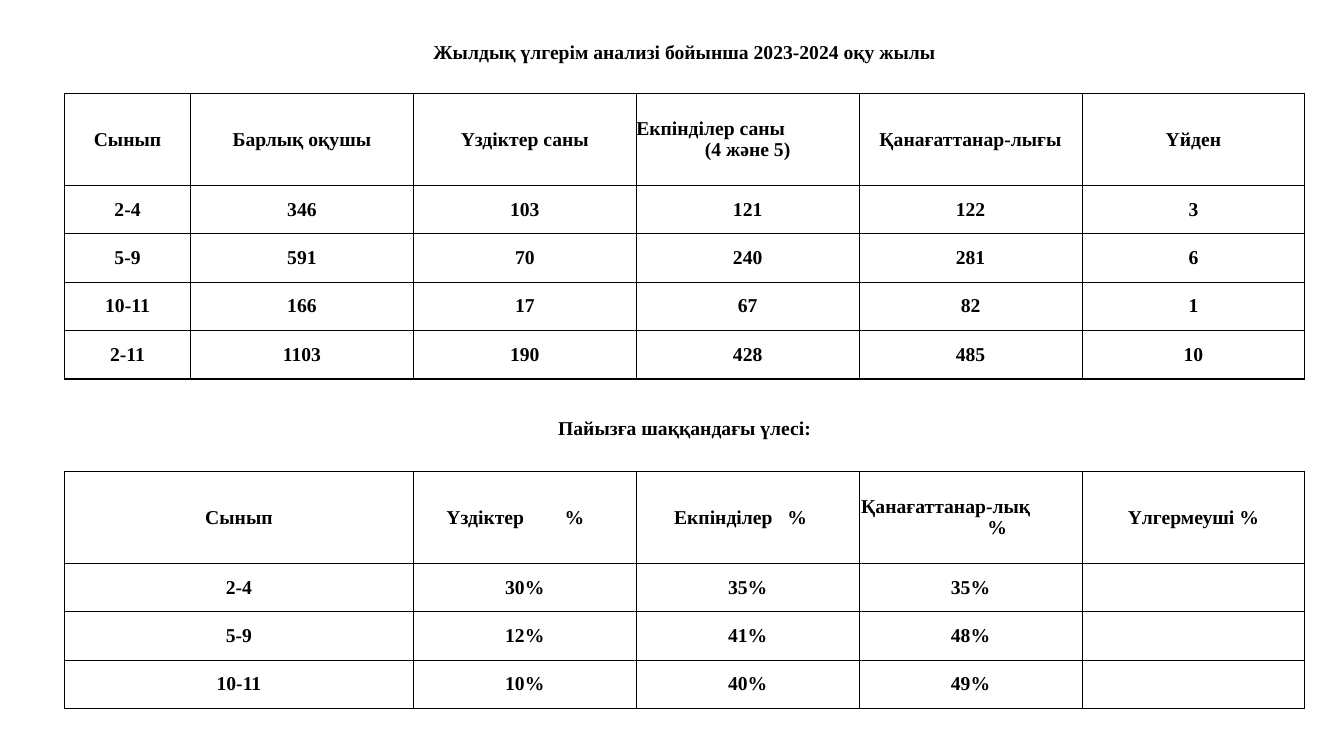
from lxml.etree import SubElement
from pptx import Presentation
from pptx.dml.color import RGBColor
from pptx.enum.text import MSO_ANCHOR as Anchor, PP_ALIGN as Align
from pptx.oxml.ns import qn
from pptx.util import Pt

BLACK = RGBColor(0, 0, 0)
THIN, THICK = 0.5, 1

COLUMN_WIDTHS = [90] + [159.2] * 5
HEADER, ENTRY = 65.5, 34.6
ROW_HEIGHTS = [28, 15.1, HEADER, *[ENTRY] * 4, 21.6, 21.6, 23, HEADER, *[ENTRY] * 3]

HEADINGS = {
    0: ("Жылдық үлгерім анализі бойынша 2023-2024 оқу жылы", Anchor.MIDDLE),
    8: ("Пайызға шаққандағы үлесі:", Anchor.BOTTOM),
}
COUNTS_TOP = 2
COUNTS = [
    ["Сынып", "Барлық оқушы", "Үздіктер саны", None, "Қанағаттанар-лығы", "Үйден"],
    ["2-4", "346", "103", "121", "122", "3"],
    ["5-9", "591", "70", "240", "281", "6"],
    ["10-11", "166", "17", "67", "82", "1"],
    ["2-11", "1103", "190", "428", "485", "10"],
]
SHARES_TOP = 10
SHARES = [
    ["Сынып", None, None, None, None, "Үлгермеуші %"],
    ["2-4", None, "30%", "35%", "35%", None],
    ["5-9", None, "12%", "41%", "48%", None],
    ["10-11", None, "10%", "40%", "49%", None],
]


class ReportSlide:
    def __init__(self, presentation, font="Times New Roman", size=14, color=BLACK):
        self.slide = presentation.slides.add_slide(presentation.slide_layouts[6])
        self.font, self.size, self.color = font, size, color

    def add_grid(self, left, top, widths, heights):
        """Add a table of plain, empty cells without borders."""
        frame = self.slide.shapes.add_table(
            len(heights), len(widths), Pt(left), Pt(top), Pt(sum(widths)), Pt(sum(heights)))
        table = frame.table
        table.first_row = table.horz_banding = False
        for column, width in zip(table.columns, widths):
            column.width = Pt(width)
        for row, height in zip(table.rows, heights):
            row.height = Pt(height)
        for cell in table.iter_cells():
            cell.margin_left = cell.margin_right = cell.margin_top = cell.margin_bottom = 0
            end = SubElement(cell.text_frame.paragraphs[0]._p, qn("a:endParaRPr"))
            end.set("sz", "1000")
            self.set_borders(cell)
            cell.fill.background()
        return table

    def set_borders(self, cell, left=0, right=0, top=0, bottom=0):
        """Set the border widths in points; 0 hides a border."""
        properties = cell._tc.get_or_add_tcPr()
        sides = zip(("a:lnL", "a:lnR", "a:lnT", "a:lnB"), (left, right, top, bottom))
        for position, (tag, width) in enumerate(sides):
            for old in properties.findall(qn(tag)):
                properties.remove(old)
            line = SubElement(properties, qn(tag), w=str(Pt(width)))
            properties.insert(position, line)
            if width:
                fill = SubElement(line, qn("a:solidFill"))
                SubElement(fill, qn("a:srgbClr"), val=str(self.color))
            else:
                SubElement(line, qn("a:noFill"))

    def add_text(self, cell, text, anchor=Anchor.MIDDLE, align=Align.CENTER):
        cell.vertical_anchor = anchor
        return self.add_run(cell.text_frame.paragraphs[0], text, align)

    def add_run(self, paragraph, text, align=Align.CENTER):
        paragraph.alignment = align
        run = paragraph.add_run()
        run.text = text
        run.font.name, run.font.size, run.font.bold = self.font, Pt(self.size), True
        run.font.color.rgb = self.color
        return paragraph

    def set_indent(self, paragraph, margin, indent=0):
        properties = paragraph._p.get_or_add_pPr()
        properties.set("marL", str(Pt(margin)))
        properties.set("indent", str(Pt(indent)))
        return properties

    def add_split_text(self, cell, first, second, first_margin=0, second_margin=0):
        """Add a left-aligned line above a centred one."""
        upper = self.add_text(cell, first, align=Align.LEFT)
        lower = self.add_run(cell.text_frame.add_paragraph(), second)
        self.set_indent(upper, first_margin)
        self.set_indent(lower, second_margin)

    def add_tabbed_text(self, cell, label, unit, indent, stop):
        """Add a label and its unit on one line, both at fixed places."""
        paragraph = self.add_text(cell, f"{label}\t{unit}", align=Align.LEFT)
        properties = self.set_indent(paragraph, 0, indent)
        tabs = SubElement(properties, qn("a:tabLst"))
        SubElement(tabs, qn("a:tab"), pos=str(Pt(stop)), algn="l")

    def fill_block(self, table, first_row, block):
        """Fill a block of rows with thin inner and thick outer borders."""
        last_row, last_column = len(block) - 1, len(block[0]) - 1
        for i, values in enumerate(block):
            for j, value in enumerate(values):
                cell = table.cell(first_row + i, j)
                if value:
                    self.add_text(cell, value)
                self.set_borders(
                    cell,
                    left=THIN if j else THICK,
                    right=THICK if j == last_column else THIN,
                    top=THIN if i else THICK,
                    bottom=THICK if i == last_row else THIN)


def main():
    presentation = Presentation()
    presentation.slide_width, presentation.slide_height = Pt(960), Pt(540)
    report = ReportSlide(presentation)
    table = report.add_grid(46.1, 23.8, COLUMN_WIDTHS, ROW_HEIGHTS)
    last_column = len(COLUMN_WIDTHS) - 1

    for row, (text, anchor) in HEADINGS.items():
        table.cell(row, 0).merge(table.cell(row, last_column))
        report.add_text(table.cell(row, 0), text, anchor)

    for first_row, block in ((COUNTS_TOP, COUNTS), (SHARES_TOP, SHARES)):
        report.fill_block(table, first_row, block)
        for column in range(last_column + 1):
            report.set_borders(table.cell(first_row - 1, column), bottom=THICK)
    for column in range(last_column + 1):
        report.set_borders(table.cell(COUNTS_TOP + len(COUNTS), column), top=THICK)
    for row in range(SHARES_TOP, SHARES_TOP + len(SHARES)):
        table.cell(row, 0).merge(table.cell(row, 1))

    report.add_split_text(table.cell(COUNTS_TOP, 3), "Екпінділер саны", "(4 және 5)")
    report.add_tabbed_text(table.cell(SHARES_TOP, 2), "Үздіктер", "%", 23.6, 121.6)
    report.add_tabbed_text(table.cell(SHARES_TOP, 3), "Екпінділер", "%", 27, 118.6)
    report.add_split_text(table.cell(SHARES_TOP, 4), "Қанағаттанар-лық", "%", 1.5, 38)

    presentation.save("out.pptx")


if __name__ == "__main__":
    main()
